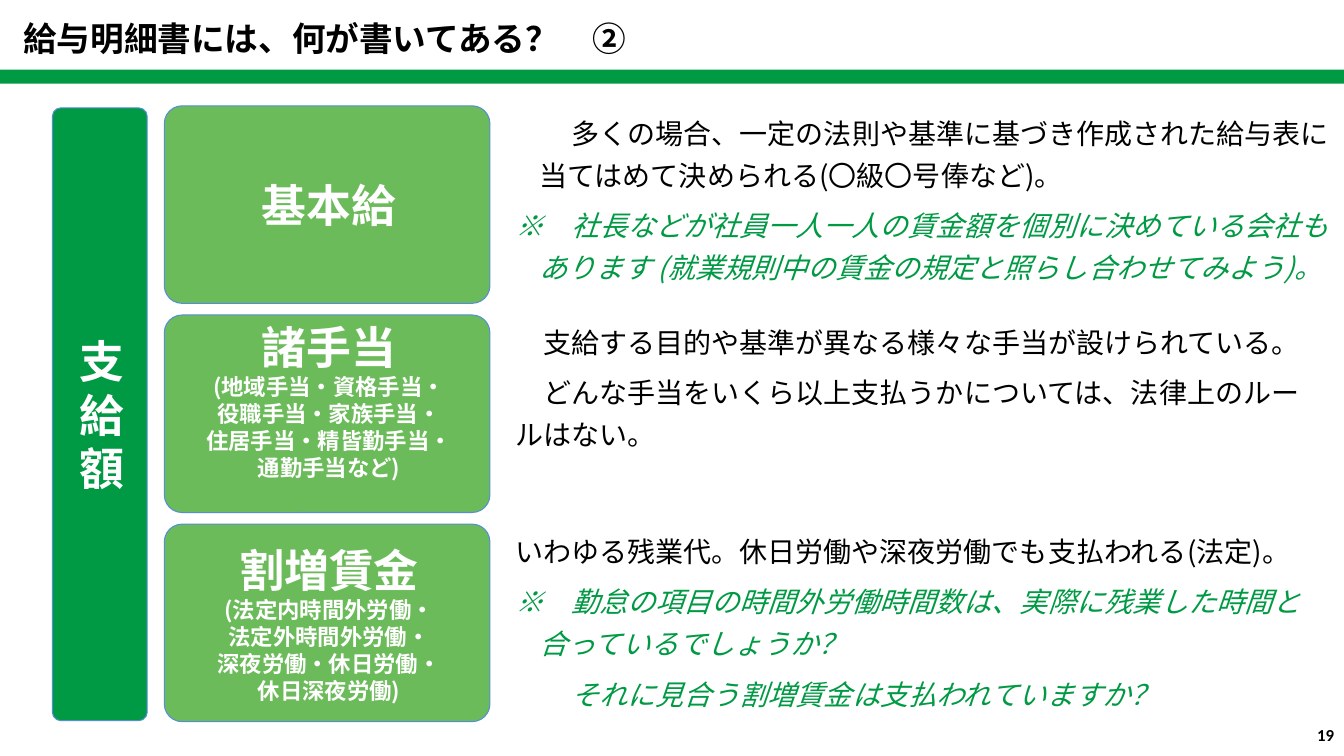
from dataclasses import dataclass

from pptx import Presentation
from pptx.dml.color import RGBColor
from pptx.enum.shapes import MSO_SHAPE
from pptx.enum.text import MSO_ANCHOR, PP_ALIGN
from pptx.util import Inches, Pt

ROUNDED = MSO_SHAPE.ROUNDED_RECTANGLE
RECTANGLE = MSO_SHAPE.RECTANGLE
TOP, MIDDLE = MSO_ANCHOR.TOP, MSO_ANCHOR.MIDDLE
LEFT, CENTER, RIGHT = PP_ALIGN.LEFT, PP_ALIGN.CENTER, PP_ALIGN.RIGHT

JAPANESE_FONT = "Noto Sans CJK JP"
GREEN, LIGHT_GREEN, OUTLINE = "009944", "6CBB5A", "558ED5"
BLACK, WHITE = "000000", "FFFFFF"
HANGING = 0.24
CARD_TOP, CARD_PITCH = 1.05, 2.075
TEXT_OFFSET = -0.03


@dataclass
class Statement:
    text: str
    margin: float = 0
    indent: float = 0
    remark: bool = False


@dataclass
class PayItem:
    name: str
    details: list[str]
    statements: list[Statement]
    text_width: float = 8.19
    bottom_inset: float = 0.04


PAY_ITEMS = [
    PayItem("基本給", [], [
        Statement("多くの場合、一定の法則や基準に基づき作成された給与表に当てはめて決められる(〇級〇号俸など)。",
                  HANGING, 0.32),
        Statement("※　社長などが社員一人一人の賃金額を個別に決めている会社もあります (就業規則中の賃金の規定と照らし合わせてみよう)。",
                  HANGING, -HANGING, True),
    ], text_width=8.32),
    PayItem("諸手当", ["(地域手当・資格手当・", "役職手当・家族手当・", "住居手当・精皆勤手当・", "通勤手当など)"], [
        Statement("支給する目的や基準が異なる様々な手当が設けられている。", indent=0.28),
        Statement("どんな手当をいくら以上支払うかについては、法律上のルールはない。", indent=0.28),
    ], bottom_inset=0.31),
    PayItem("割増賃金", ["(法定内時間外労働・", "法定外時間外労働・", "深夜労働・休日労働・", "休日深夜労働)"], [
        Statement("いわゆる残業代。休日労働や深夜労働でも支払われる(法定)。"),
        Statement("※　勤怠の項目の時間外労働時間数は、実際に残業した時間と合っているでしょうか？",
                  HANGING, -HANGING, True),
        Statement("それに見合う割増賃金は支払われていますか？", HANGING, 0.32, True),
    ]),
]


def rgb(color: str) -> RGBColor:
    return RGBColor.from_string(color)


def format_paragraph(paragraph, text: str, size: float, color: str, bold: bool = False,
                     italic: bool = False, align=LEFT, font_name: str = JAPANESE_FONT) -> None:
    paragraph.text = text
    paragraph.alignment = align
    font = paragraph.font
    font.name, font.size = font_name, Pt(size)
    font.bold, font.italic = bold, italic
    font.color.rgb = rgb(color)


def next_paragraph(text_frame, index: int):
    """Return the existing first paragraph, or a new one after it."""
    return text_frame.add_paragraph() if index else text_frame.paragraphs[0]


def add_box(slide, kind, left: float, top: float, width: float, height: float, fill: str):
    shape = slide.shapes.add_shape(kind, Inches(left), Inches(top), Inches(width), Inches(height))
    shape.shadow.inherit = False
    shape.fill.solid()
    shape.fill.fore_color.rgb = rgb(fill)
    shape.line.fill.background()
    return shape


def add_card(slide, left: float, top: float, width: float, height: float, fill: str,
             name: str, details: list[str], bottom_inset: float = 0.04) -> None:
    card = add_box(slide, ROUNDED, left, top, width, height, fill)
    card.adjustments[0] = 0.09
    card.line.color.rgb = rgb(OUTLINE)
    card.line.width = Pt(0.75)
    frame = card.text_frame
    frame.word_wrap = True
    frame.vertical_anchor = MIDDLE
    frame.margin_left = Inches(0.08)
    frame.margin_top = frame.margin_right = Inches(0.04)
    frame.margin_bottom = Inches(bottom_inset)
    for index, text in enumerate([name, *details]):
        format_paragraph(next_paragraph(frame, index), text, 16 if index else 32, WHITE,
                         bold=True, align=CENTER)


def add_text_frame(slide, left: float, top: float, width: float, height: float):
    box = slide.shapes.add_textbox(Inches(left), Inches(top), Inches(width), Inches(height))
    box.text_frame.word_wrap = True
    return box.text_frame


def add_statements(slide, top: float, item: PayItem) -> None:
    frame = add_text_frame(slide, 5.01, top, item.text_width, 1.9)
    for index, statement in enumerate(item.statements):
        paragraph = next_paragraph(frame, index)
        format_paragraph(paragraph, statement.text, 20, GREEN if statement.remark else BLACK,
                         italic=statement.remark)
        paragraph.line_spacing = 1.25
        paragraph.space_after = Pt(6)
        properties = paragraph._p.get_or_add_pPr()
        properties.set("marL", str(Inches(statement.margin)))
        properties.set("indent", str(Inches(statement.indent)))


def add_title(slide) -> None:
    title = slide.shapes.title
    title.left, title.top = Inches(0.13), Inches(0.13)
    title.width, title.height = Inches(11.81), Inches(0.5)
    title.text_frame.vertical_anchor = TOP
    format_paragraph(title.text_frame.paragraphs[0], "給与明細書には、何が書いてある？　②",
                     24, BLACK, bold=True)


def main() -> None:
    presentation = Presentation()
    presentation.slide_width, presentation.slide_height = Inches(13.33), Inches(7.5)
    slide = presentation.slides.add_slide(presentation.slide_layouts[5])

    add_title(slide)
    add_box(slide, RECTANGLE, 0, 0.69, 13.33, 0.14, GREEN)
    add_card(slide, 0.52, 1.07, 0.94, 6.08, GREEN, "支給額", [])
    for index, item in enumerate(PAY_ITEMS):
        top = CARD_TOP + index * CARD_PITCH
        add_card(slide, 1.63, top, 3.23, 1.96, LIGHT_GREEN, item.name, item.details,
                 item.bottom_inset)
        add_statements(slide, top + TEXT_OFFSET, item)

    page_frame = add_text_frame(slide, 10.22, 7.09, 3.11, 0.4)
    page_frame.vertical_anchor = MIDDLE
    format_paragraph(page_frame.paragraphs[0], "19", 12, BLACK, bold=True, align=RIGHT,
                     font_name="Calibri")

    presentation.save("out.pptx")


if __name__ == "__main__":
    main()
